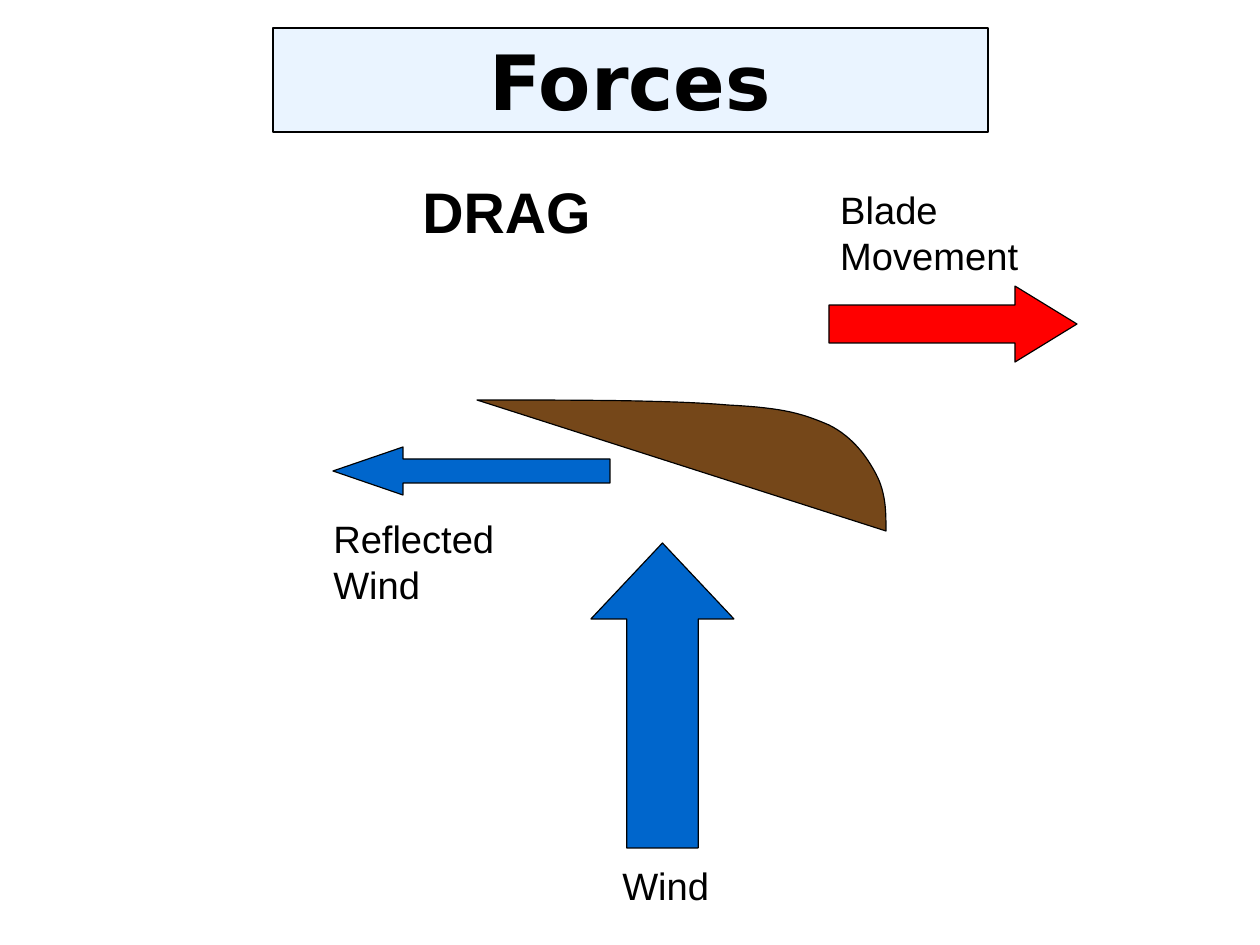
from lxml import etree
from pptx import Presentation
from pptx.dml.color import RGBColor
from pptx.enum.shapes import MSO_SHAPE as Shape
from pptx.enum.text import MSO_ANCHOR as Anchor, PP_ALIGN as Align
from pptx.oxml.ns import qn
from pptx.util import Pt

PX = 8000  # EMU per px
SLIDE_SIZE = (1260, 945)
BLACK = RGBColor(0x00, 0x00, 0x00)
PALE_BLUE = RGBColor(0x99, 0xCC, 0xFF)
WIND_BLUE = RGBColor(0x00, 0x66, 0xCC)
MOVEMENT_RED = RGBColor(0xFF, 0x00, 0x00)
BLADE_BROWN = RGBColor(0x66, 0x33, 0x00)

BLADE_NOSE = (886, 531)
# Each curve: two control points and an end point, from the nose to the tip.
BLADE_CURVES = [
    ((886, 512), (886, 493), (876, 474)),
    ((867, 457), (853, 437), (829, 425)),
    ((803, 414), (786, 408), (728, 405)),
    ((670, 400), (573, 400), (477, 400)),
]
STEPS_PER_CURVE = 16


def emu(*lengths):
    return [round(length * PX) for length in lengths]


def paint(shape, color, opacity=100):
    shape.shadow.inherit = False
    shape.fill.solid()
    shape.fill.fore_color.rgb = color
    if opacity < 100:
        tint = shape.fill._xPr.find(qn("a:solidFill"))[0]
        etree.SubElement(tint, qn("a:alpha")).set("val", str(opacity * 1000))
    shape.line.color.rgb = BLACK
    shape.line.width = Pt(0.75)


def write(frame, text, size, font="Arial", bold=False, align=Align.LEFT):
    frame.word_wrap = True
    paragraph = frame.paragraphs[0]
    paragraph.alignment = align
    run = paragraph.add_run()
    run.text = text
    run.font.name = font
    run.font.size = Pt(size)
    run.font.bold = bold
    run.font.color.rgb = BLACK


def add_title(slide, text):
    banner = slide.shapes.add_shape(Shape.RECTANGLE, *emu(273, 28, 715, 104))
    paint(banner, PALE_BLUE, opacity=20)
    banner.text_frame.vertical_anchor = Anchor.MIDDLE
    write(banner.text_frame, text, 48, "DejaVu Sans", True, Align.CENTER)


def add_label(slide, text, box, size=24, **style):
    label = slide.shapes.add_textbox(*emu(*box))
    write(label.text_frame, text, size, **style)


def add_arrow(slide, direction, box, head, color):
    """Draw a block arrow whose head is the given number of px long."""
    arrow = slide.shapes.add_shape(direction, *emu(*box))
    arrow.adjustments[0] = 0.5
    arrow.adjustments[1] = head / min(box[2:])
    paint(arrow, color)


def bezier_point(t, *controls):
    weights = ((1 - t) ** 3, 3 * t * (1 - t) ** 2, 3 * t ** 2 * (1 - t), t ** 3)
    return [sum(w * c for w, c in zip(weights, axis)) for axis in zip(*controls)]


def add_blade(slide):
    outline = []
    start = BLADE_NOSE
    for curve in BLADE_CURVES:
        for step in range(1, STEPS_PER_CURVE + 1):
            outline.append(emu(*bezier_point(step / STEPS_PER_CURVE, start, *curve)))
        start = curve[-1]
    builder = slide.shapes.build_freeform(*emu(*BLADE_NOSE))
    builder.add_line_segments(outline, close=True)
    paint(builder.convert_to_shape(), BLADE_BROWN, opacity=90)


def main():
    deck = Presentation()
    deck.slide_width, deck.slide_height = emu(*SLIDE_SIZE)
    slide = deck.slides.add_slide(deck.slide_layouts[6])

    add_title(slide, "Forces")
    add_label(slide, "DRAG", (278, 171, 457, 80), 36, bold=True, align=Align.CENTER)

    add_arrow(slide, Shape.UP_ARROW, (591, 543, 143, 305), 76, WIND_BLUE)
    add_label(slide, "Wind", (611, 857, 228, 57))

    add_arrow(slide, Shape.RIGHT_ARROW, (829, 286, 248, 76), 62, MOVEMENT_RED)
    add_label(slide, "Blade Movement", (829, 181, 240, 103))

    add_blade(slide)

    add_arrow(slide, Shape.LEFT_ARROW, (333, 447, 277, 48), 70, WIND_BLUE)
    add_label(slide, "Reflected Wind", (322, 510, 240, 103))

    deck.save("out.pptx")


if __name__ == "__main__":
    main()
